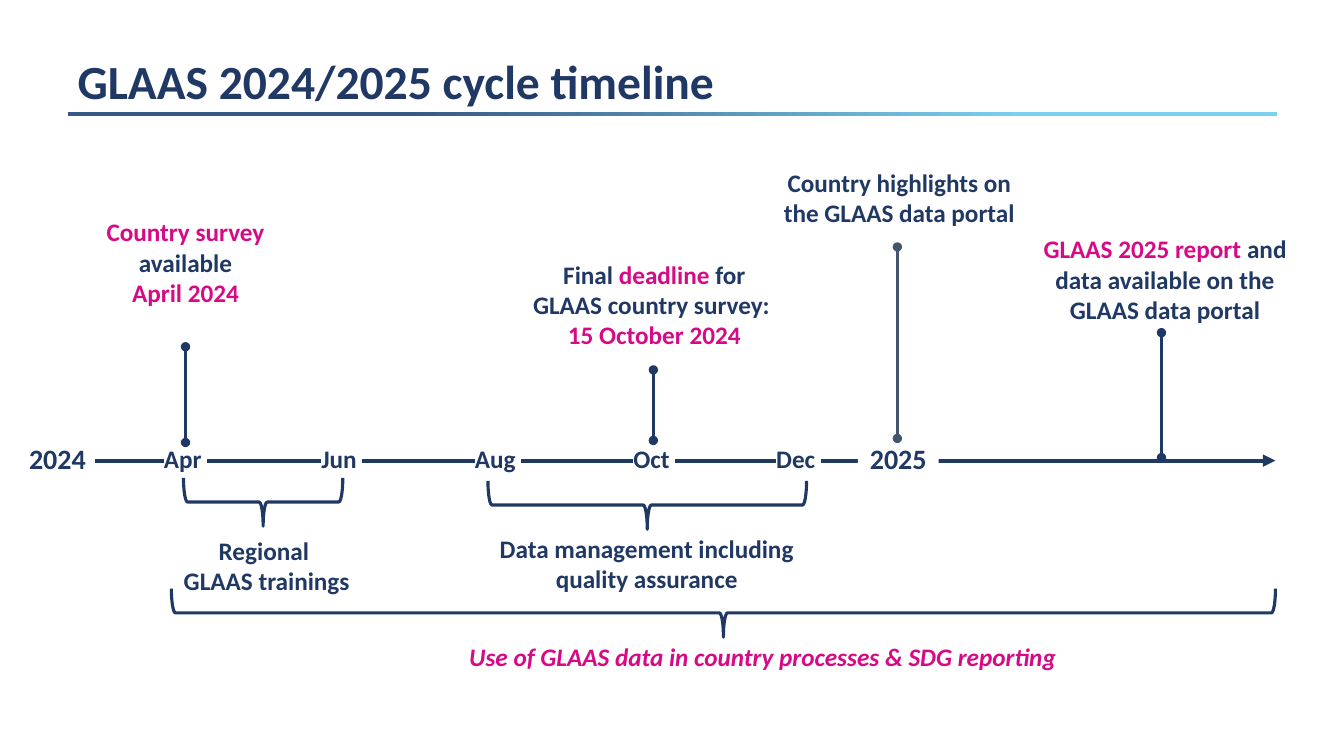
from lxml import etree
from pptx import Presentation
from pptx.dml.color import RGBColor
from pptx.enum.shapes import MSO_CONNECTOR as Connector, MSO_SHAPE as Shape
from pptx.enum.text import MSO_ANCHOR as Anchor, MSO_AUTO_SIZE as AutoSize, PP_ALIGN as Align
from pptx.oxml.ns import qn
from pptx.util import Inches, Pt

NAVY = RGBColor(0x20, 0x38, 0x64)
MAGENTA = RGBColor(0xD6, 0x0A, 0x87)
SLATE = RGBColor(0x44, 0x54, 0x6A)
WHITE = RGBColor(0xFF, 0xFF, 0xFF)
RULE_START = RGBColor(0x37, 0x59, 0x87)
RULE_END = RGBColor(0x7B, 0xD0, 0xEF)

AXIS_Y = 4.57
MONTHS = [("Apr ", 1.84), ("Jun ", 3.39), ("Aug ", 4.94), ("Oct ", 6.49), ("Dec ", 7.92)]
MILESTONES = [
    ((0.58, 2.1, 2.52, 1.01),
     [[("Country survey ", MAGENTA), ("available", NAVY)], [("April 2024", MAGENTA)]],
     (1.84, 3.44, 4.39), NAVY),
    ((5.14, 2.52, 2.7, 1.01),
     [[("Final ", NAVY), ("deadline ", MAGENTA), ("for GLAAS country survey: ", NAVY)],
      [("15 October 2024", MAGENTA)]],
     (6.48, 3.67, 4.37), NAVY),
    ((7.57, 1.61, 2.7, 0.71),
     [[("Country highlights on the GLAAS data portal", NAVY)]],
     (8.9, 2.45, 4.35), SLATE),
    ((10.16, 2.27, 2.79, 1.01),
     [[("GLAAS 2025 report ", MAGENTA), ("and data available on the GLAAS data portal", NAVY)]],
     (11.52, 3.3, 4.54), NAVY),
]
PERIODS = [
    ((1.82, 4.74, 1.58, 0.48), (1.15, 5.26, 2.99, 0.71),
     [[("Regional ", NAVY)], [("GLAAS trainings", NAVY)]], False),
    ((4.84, 4.77, 3.16, 0.48), (4.81, 5.24, 3.21, 0.71),
     [[("Data management including quality assurance", NAVY)]], False),
    ((1.7, 5.84, 10.95, 0.48), (4.36, 6.31, 6.41, 0.4),
     [[("Use of GLAAS data in country processes & SDG reporting", MAGENTA)]], True),
]


def write_text(shape, paragraphs, size=18, italic=False):
    """Fill a shape with centred bold paragraphs of (text, colour) runs."""
    frame = shape.text_frame
    frame.word_wrap = True
    frame.auto_size = AutoSize.SHAPE_TO_FIT_TEXT
    for index, pieces in enumerate(paragraphs):
        paragraph = frame.add_paragraph() if index else frame.paragraphs[0]
        paragraph.alignment = Align.CENTER
        for words, color in pieces:
            run = paragraph.add_run()
            run.text = words
            run.font.name, run.font.size = "Calibri", Pt(size)
            run.font.bold, run.font.italic = True, italic
            run.font.color.rgb = color


def add_label(slide, box, paragraphs, size=18, italic=False):
    """Add a text box in the given box."""
    label = slide.shapes.add_textbox(*map(Inches, box))
    write_text(label, paragraphs, size, italic)
    return label


def add_line(slide, start, end, color, width, tail, head="none"):
    """Draw a straight line with the given end marks."""
    line = slide.shapes.add_connector(Connector.STRAIGHT, *map(Inches, start + end))
    line.line.color.rgb = color
    line.line.width = Pt(width)
    outline = line.line._get_or_add_ln()
    etree.SubElement(outline, qn("a:headEnd")).set("type", head)
    etree.SubElement(outline, qn("a:tailEnd")).set("type", tail)
    etree.SubElement(line._element.spPr, qn("a:effectLst"))


def add_highlight(label):
    """Put white behind the words of a label so that they part the axis."""
    for run in label.text_frame.paragraphs[0].runs:
        highlight = etree.Element(qn("a:highlight"))
        etree.SubElement(highlight, qn("a:srgbClr"), val=str(WHITE))
        run.font._element.find(qn("a:solidFill")).addnext(highlight)


def add_heading(slide, box):
    """Place the title and the gradient rule under it."""
    left, top, width, height = box
    title = slide.shapes.title
    title.left, title.top, title.width, title.height = map(Inches, box)
    title.text_frame.text = "GLAAS 2024/2025 cycle timeline"
    title.text_frame.vertical_anchor = Anchor.BOTTOM
    paragraph = title.text_frame.paragraphs[0]
    paragraph.alignment = Align.LEFT
    paragraph.line_spacing = 0.9
    font = paragraph.runs[0].font
    font.name, font.size, font.bold = "Calibri", Pt(34), True
    font.color.rgb = NAVY

    rule = slide.shapes.add_shape(
        Shape.RECTANGLE, *map(Inches, (left, top + height - 0.03, width, 0.04)))
    rule.shadow.inherit = False
    rule.line.fill.background()
    rule.fill.gradient()
    rule.fill.gradient_angle = 0
    stops = [(0.28, RULE_START), (0.79, RULE_END)]
    for stop, (position, color) in zip(rule.fill.gradient_stops, stops):
        stop.position = position
        stop.color.rgb = color


def add_axis(slide, left, right, y):
    """Draw the time axis with its month and year labels."""
    add_line(slide, (left, y), (right, y), NAVY, 3, "triangle")
    for month, center in MONTHS:
        add_highlight(add_label(slide, (center - 0.69, y - 0.22, 1.38, 0.4), [[(month, NAVY)]]))
    add_label(slide, (left - 0.96, y - 0.24, 1.18, 0.44), [[("2024", NAVY)]], 20)
    next_year = slide.shapes.add_shape(
        Shape.RECTANGLE, *map(Inches, (8.51, y - 0.24, 0.8, 0.44)))
    next_year.shadow.inherit = False
    next_year.fill.solid()
    next_year.fill.fore_color.rgb = WHITE
    next_year.line.fill.background()
    write_text(next_year, [[("2025", NAVY)]], 20)


def add_milestone(slide, box, paragraphs, stem, color):
    """Place a milestone label and the stem that ties it to the axis."""
    x, top, bottom = stem
    add_label(slide, box, paragraphs)
    add_line(slide, (x, top), (x, bottom), color, 2.25, "oval", "oval")


def add_period(slide, span, box, paragraphs, italic):
    """Place a downward brace over its span and the label below it."""
    left, top, width, height = span
    turned = (left + (width - height) / 2, top + (height - width) / 2, height, width)
    brace = slide.shapes.add_shape(Shape.LEFT_BRACE, *map(Inches, turned))
    brace.rotation = 270
    brace.shadow.inherit = False
    brace.fill.background()
    brace.line.color.rgb = NAVY
    brace.line.width = Pt(2.25)
    add_label(slide, box, paragraphs, italic=italic)


def main():
    """Build the timeline slide and save it."""
    deck = Presentation()
    deck.slide_width, deck.slide_height = Inches(13.33), Inches(7.5)
    slide = deck.slides.add_slide(deck.slide_layouts[5])
    add_heading(slide, (0.67, 0.22, 12, 0.92))
    add_axis(slide, 0.94, 12.65, AXIS_Y)
    for milestone in MILESTONES:
        add_milestone(slide, *milestone)
    for period in PERIODS:
        add_period(slide, *period)
    deck.save("out.pptx")


if __name__ == "__main__":
    main()
